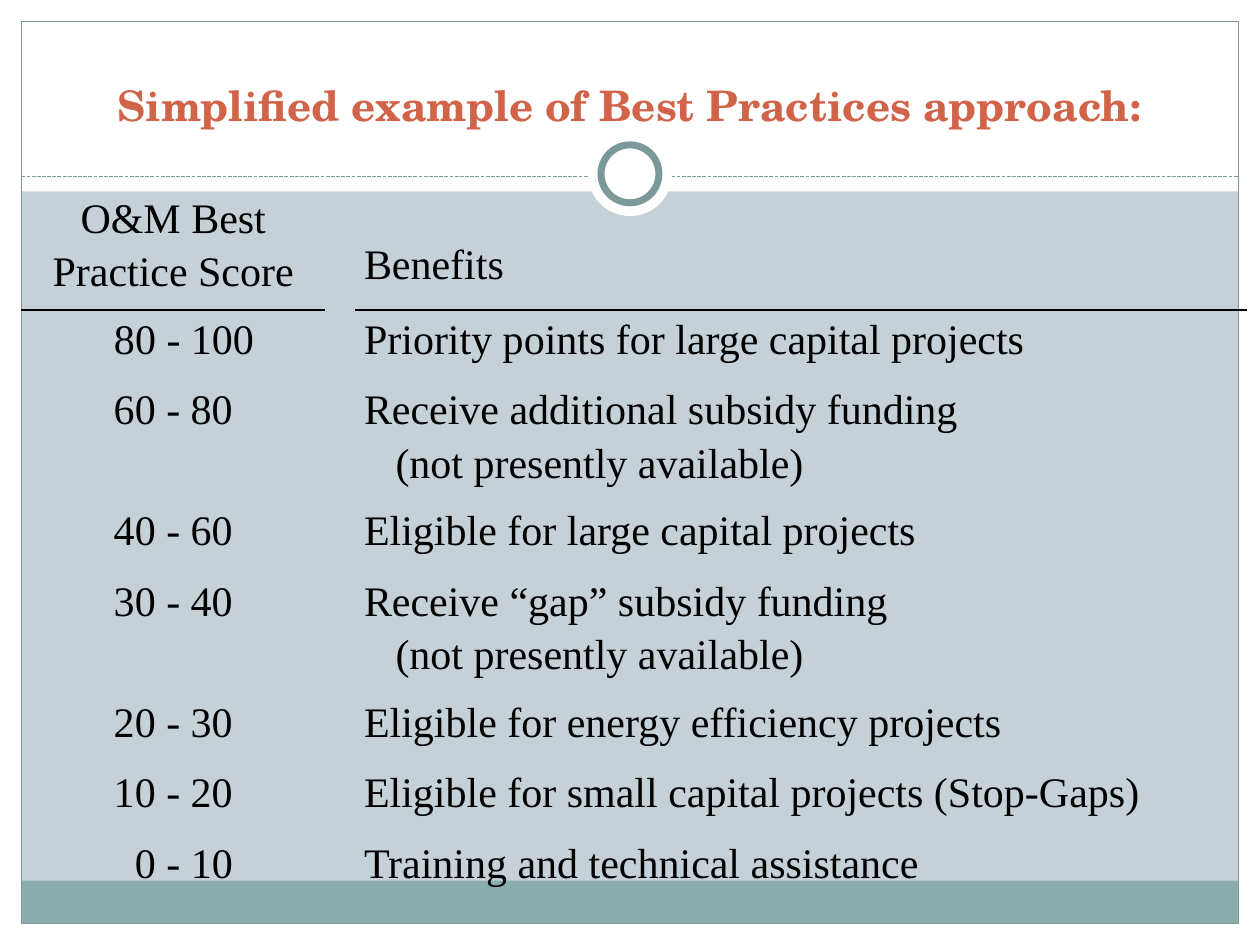
from dataclasses import dataclass

import pptx
import pptx.dml.color
import pptx.enum.dml
import pptx.enum.shapes
import pptx.enum.text
import pptx.oxml
import pptx.oxml.ns
import pptx.util

Inches = pptx.util.Inches
Pt = pptx.util.Pt
SHAPE = pptx.enum.shapes.MSO_SHAPE
ALIGN = pptx.enum.text.PP_ALIGN
ANCHOR = pptx.enum.text.MSO_ANCHOR


@dataclass(frozen=True)
class Theme:
    background: str = "C5D1D7"
    paper: str = "FFFFFF"
    band: str = "8CADAE"
    rule: str = "7C999A"
    title: str = "D16349"
    ink: str = "000000"
    title_font: str = "TeX Gyre Schola"
    body_font: str = "Times New Roman"
    size: int = 24
    spacing: float = 1.15
    thin: float = 0.75
    ring: float = 4


THEME = Theme()
W, H = 10, 7.5
EDGE = 0.17
HEADER = 1.52
RULE_Y = 1.4
RING_Y = 1.38
TABLE_TOP = 1.5
COLUMNS = (2.41, 0.18, 7.08)
SINGLE, DOUBLE, LAST = 0.56, 0.96, 0.74
CELL_PAD = 0.07
SCORE_SHIFT = 0.17
NOTE_INDENT = 0.25
BENEFITS_DROP = 0.37
PLAIN_TABLE = "{2D5ABB26-0587-4C30-8999-92F81FD0307C}"

NOTE = "(not presently available)"
SCORES = [
    ("80 - 100", ["Priority points for large capital projects"], SCORE_SHIFT),
    ("60 - 80", ["Receive additional subsidy funding", NOTE], 0),
    ("40 - 60", ["Eligible for large capital projects"], 0),
    ("30 - 40", ["Receive “gap” subsidy funding", NOTE], 0),
    ("20 - 30", ["Eligible for energy efficiency projects"], 0),
    ("10 - 20", ["Eligible for small capital projects (Stop-Gaps)"], 0),
    ("0 - 10", ["Training and technical assistance"], SCORE_SHIFT),
]


def rgb(color):
    return pptx.dml.color.RGBColor.from_string(color)


def add_block(s, kind, box, fill=None, line=None, width=THEME.thin):
    sp = s.shapes.add_shape(kind, *map(Inches, box))
    sp.shadow.inherit = False
    if fill:
        sp.fill.solid()
        sp.fill.fore_color.rgb = rgb(fill)
    else:
        sp.fill.background()
    if line:
        sp.line.color.rgb = rgb(line)
        sp.line.width = Pt(width)
    else:
        sp.line.fill.background()


def add_circle(s, diameter, **style):
    box = (W / 2 - diameter / 2, RING_Y - diameter / 2, diameter, diameter)
    add_block(s, SHAPE.OVAL, box, THEME.paper, **style)


def add_dashed_rule(s):
    line = s.shapes.add_connector(
        pptx.enum.shapes.MSO_CONNECTOR.STRAIGHT,
        Inches(EDGE), Inches(RULE_Y), Inches(W - EDGE), Inches(RULE_Y))
    line.line.color.rgb = rgb(THEME.rule)
    line.line.width = Pt(THEME.thin)
    line.line.dash_style = pptx.enum.dml.MSO_LINE.SQUARE_DOT
    pptx.oxml.ns.qn("a:effectLst")
    line.element.spPr.append(pptx.oxml.parse_xml(
        f'<a:effectLst {pptx.oxml.ns.nsdecls("a")}/>'))


def add_frame(s):
    margins = [
        (0, H - EDGE, W, EDGE),
        (0, 0, W, HEADER),
        (0, 0, EDGE, H),
        (W - EDGE, 0, EDGE, H),
    ]
    for box in margins:
        add_block(s, SHAPE.RECTANGLE, box, THEME.paper)
    inner = W - 2 * EDGE
    add_block(s, SHAPE.RECTANGLE, (EDGE, 6.99, inner, 0.34), THEME.band)
    add_block(s, SHAPE.RECTANGLE, (EDGE, EDGE, inner, H - 2 * EDGE), line=THEME.rule)
    add_dashed_rule(s)
    add_circle(s, 0.67)
    add_circle(s, 0.46, line=THEME.rule, width=THEME.ring)


def format_runs(p, font, color, bold=False):
    for r in p.runs:
        r.font.name = font
        r.font.size = Pt(THEME.size)
        r.font.bold = bold
        r.font.color.rgb = rgb(color)


def write_cell(cell, lines, align, shift=0, drop=0):
    cell.margin_left = Inches(CELL_PAD + shift)
    cell.margin_right = Inches(CELL_PAD)
    cell.margin_top = Inches(drop)
    cell.margin_bottom = 0
    cell.text_frame.text = "\n".join(lines)
    for i, p in enumerate(cell.text_frame.paragraphs):
        p.alignment = align
        p.line_spacing = THEME.spacing
        if i:
            p._p.get_or_add_pPr().set("marL", str(Inches(NOTE_INDENT)))
        format_runs(p, THEME.body_font, THEME.ink)


def add_bottom_border(cell):
    cell._tc.get_or_add_tcPr().insert(0, pptx.oxml.parse_xml(
        f'<a:lnB {pptx.oxml.ns.nsdecls("a")} w="{Pt(1)}"><a:solidFill>'
        f'<a:srgbClr val="{THEME.ink}"/></a:solidFill></a:lnB>'))


def add_score_table(s):
    heights = [DOUBLE] + [DOUBLE if len(b) > 1 else SINGLE for _, b, _ in SCORES]
    heights[-1] = LAST
    frame = s.shapes.add_table(
        len(heights), len(COLUMNS), Inches(EDGE), Inches(TABLE_TOP),
        Inches(sum(COLUMNS)), Inches(sum(heights)))
    table = frame.table
    table._tbl.tblPr.find(pptx.oxml.ns.qn("a:tableStyleId")).text = PLAIN_TABLE
    table.first_row = table.horz_banding = False
    for column, width in zip(table.columns, COLUMNS):
        column.width = Inches(width)
    for row, height in zip(table.rows, heights):
        row.height = Inches(height)
    for cell in table.iter_cells():
        cell.fill.background()
    write_cell(table.cell(0, 0), ["O&M Best Practice Score"], ALIGN.CENTER)
    write_cell(table.cell(0, 2), ["Benefits"], ALIGN.LEFT, drop=BENEFITS_DROP)
    for col in (0, 2):
        add_bottom_border(table.cell(0, col))
    for row, (score, benefits, shift) in enumerate(SCORES, 1):
        write_cell(table.cell(row, 0), [score], ALIGN.CENTER, shift)
        write_cell(table.cell(row, 2), benefits, ALIGN.LEFT)


def set_title(s, text):
    title = s.shapes.title
    title.left, title.top, title.width, title.height = map(
        Inches, (0.33, 0.25, 9.33, 0.83))
    tf = title.text_frame
    tf.text = text
    tf.vertical_anchor = ANCHOR.BOTTOM
    p = tf.paragraphs[0]
    p.alignment = ALIGN.CENTER
    format_runs(p, THEME.title_font, THEME.title, bold=True)
    s.shapes.element.append(title.element)


def main():
    prs = pptx.Presentation()
    prs.slide_width, prs.slide_height = Inches(W), Inches(H)
    s = prs.slides.add_slide(prs.slide_layouts[5])
    s.background.fill.solid()
    s.background.fill.fore_color.rgb = rgb(THEME.background)
    add_frame(s)
    add_score_table(s)
    set_title(s, "Simplified example of Best Practices approach:")
    prs.save("out.pptx")


if __name__ == "__main__":
    main()
